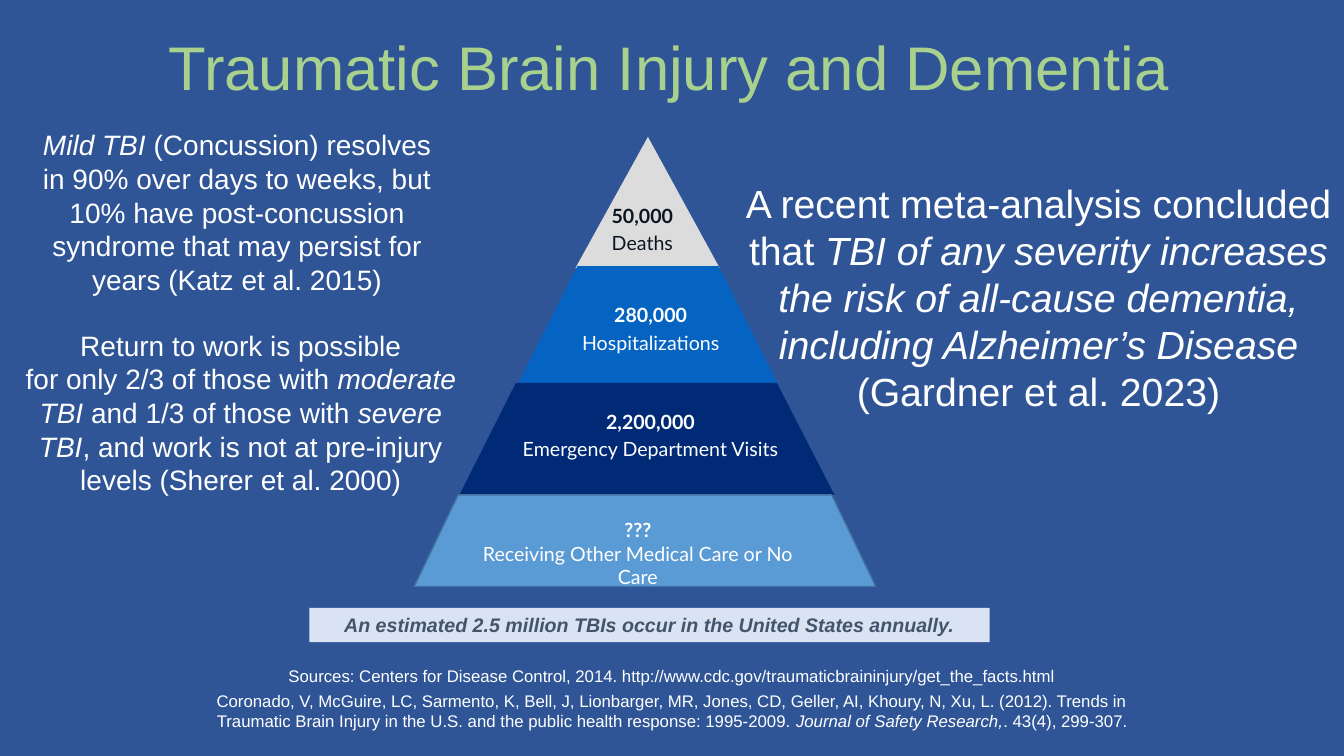
from dataclasses import dataclass

from lxml import etree
from pptx import Presentation
from pptx.dml.color import RGBColor
from pptx.enum.shapes import MSO_SHAPE
from pptx.enum.text import MSO_ANCHOR, PP_ALIGN
from pptx.util import Cm, Pt

CENTER = PP_ALIGN.CENTER
TOP, MIDDLE = MSO_ANCHOR.TOP, MSO_ANCHOR.MIDDLE
RECTANGLE, TRAPEZOID = MSO_SHAPE.RECTANGLE, MSO_SHAPE.TRAPEZOID
TITLE_ONLY = 5


@dataclass(frozen=True)
class Theme:
    """Colours, fonts and type sizes of the slide."""
    background: str = "2F5597"
    title: str = "A9D18E"
    text: str = "FFFFFF"
    dark: str = "0C1621"
    banner: str = "DAE3F3"
    banner_text: str = "44546A"
    deaths: str = "DCDCDC"
    hospital: str = "0563C1"
    emergency: str = "002A76"
    other: str = "5B9BD5"
    other_line: str = "43739E"
    body_font: str = "Arial"
    label_font: str = "Lato"
    title_size: int = 44
    finding_size: int = 28
    body_size: int = 20
    label_size: int = 14
    source_size: int = 12


THEME = Theme()

TIERS = [
    (THEME.deaths, [(5.89, 0), (4.06, 3.31), (7.7, 3.31)],
     (4.57, 1.66, 2.36, 1.32), THEME.dark, "50,000", "Deaths"),
    (THEME.hospital, [(2.56, 6.33), (9.22, 6.33), (7.67, 3.26), (4.11, 3.26)],
     (3.89, 4.17, 4.14, 1.32), THEME.text, "280,000", "Hospitalizations"),
    (THEME.emergency, [(1.14, 9.02), (10.59, 9.02), (9.14, 6.2), (2.56, 6.2)],
     (2.26, 6.86, 7.39, 1.32), THEME.text, "2,200,000", "Emergency Department Visits"),
]
MILD = [[("Mild TBI ", "i"),
         ("(Concussion) resolves in 90% over days to weeks, but 10% have "
          "post-concussion syndrome that may persist for years (Katz et al. 2015)", "")]]
RETURN_TO_WORK = [
    [("Return to work is possible", "")],
    [("for only 2/3 of those with ", ""), ("moderate TBI", "i"),
     (" and 1/3 of those with ", ""), ("severe TBI", "i"),
     (", and work is not at pre-injury levels (Sherer et al. 2000)", "")],
]
FINDING = [
    [("A recent meta-analysis concluded", "")],
    [("that ", ""), ("TBI of any severity increases", "i")],
    [("the risk of all-cause dementia,", "i")],
    [("including Alzheimer’s Disease", "i")],
    [("(Gardner et al. 2023)", "")],
]
SOURCES = [
    [("Sources: Centers for Disease Control, 2014. "
      "http://www.cdc.gov/traumaticbraininjury/get_the_facts.html", "")],
    [("Coronado, V, McGuire, LC, Sarmento, K, Bell, J, Lionbarger, MR, Jones, CD, "
      "Geller, AI, Khoury, N, Xu, L. (2012). Trends in Traumatic Brain Injury in the U.S. "
      "and the public health response: 1995-2009. ", ""),
     ("Journal of Safety Research,", "i"), (". 43(4), 299-307.", "")],
]


def rgb(color):
    """Turn a hex string into a colour."""
    return RGBColor.from_string(color)


def write(tf, paragraphs, size, color=THEME.text, font=THEME.body_font, gap=0):
    """Fill a text frame with centred paragraphs of (text, style) runs."""
    for i, runs in enumerate(paragraphs):
        p = tf.add_paragraph() if i else tf.paragraphs[0]
        p.alignment = CENTER
        p.space_before = Pt(gap if i else 0)
        p.font.name, p.font.size = font, Pt(size)
        p.font.color.rgb = rgb(color)
        for text, style in runs:
            r = p.add_run()
            r.text = text
            if "b" in style:
                r.font.bold = True
            if "i" in style:
                r.font.italic = True


def paint(sp, fill, line=None):
    """Give a shape a flat fill, an optional outline and no shadow."""
    sp.shadow.inherit = False
    sp.fill.solid()
    sp.fill.fore_color.rgb = rgb(fill)
    if line:
        sp.line.color.rgb = rgb(line)
        sp.line.width = Pt(1)
    else:
        sp.line.fill.background()


def add_text(s, box, paragraphs, size, wrap=True, anchor=TOP, inset=True, **style):
    """Place a text box at a box given in centimetres."""
    tf = s.shapes.add_textbox(*map(Cm, box)).text_frame
    tf.word_wrap, tf.vertical_anchor = wrap, anchor
    if not inset:
        tf.margin_left = tf.margin_right = tf.margin_top = tf.margin_bottom = 0
    write(tf, paragraphs, size, **style)


def add_title(s, box, text):
    """Move and format the title placeholder."""
    sp = s.shapes.title
    sp.left, sp.top, sp.width, sp.height = map(Cm, box)
    sp.text_frame.vertical_anchor = MIDDLE
    write(sp.text_frame, [[(text, "")]], THEME.title_size, THEME.title)


def add_pyramid(s, box):
    """Draw the four tiers of the pyramid with their labels."""
    left, top, width, height = box
    for fill, points, *_ in TIERS:
        corners = [(Cm(left + x), Cm(top + y)) for x, y in points]
        builder = s.shapes.build_freeform(*corners[0], scale=1.0)
        builder.add_line_segments(corners[1:], close=True)
        paint(builder.convert_to_shape(), fill)
    for _, _, (x, y, w, h), color, count, name in TIERS:
        add_text(s, (left + x, top + y, w, h), [[(count, "b")], [(name, "")]],
                 THEME.label_size, anchor=MIDDLE, inset=False,
                 color=color, font=THEME.label_font, gap=2.8)
    base_top = 9.02
    base = s.shapes.add_shape(TRAPEZOID, Cm(left), Cm(top + base_top),
                              Cm(width), Cm(height - base_top))
    base.adjustments[0] = 0.48
    paint(base, THEME.other, THEME.other_line)
    add_text(s, (left + 1.24, top + 9.48, 8.79, 1.45),
             [[("???", "b")], [("Receiving Other Medical Care or No Care", "")]],
             THEME.label_size, font=THEME.label_font)


def add_banner(s, box, text):
    """Draw the highlighted statement under the pyramid."""
    sp = s.shapes.add_shape(RECTANGLE, *map(Cm, box))
    paint(sp, THEME.banner)
    sp.text_frame.word_wrap = True
    write(sp.text_frame, [[(text, "bi")]], THEME.label_size, THEME.banner_text)


def main():
    """Build and save the slide."""
    prs = Presentation()
    prs.slide_width, prs.slide_height = Cm(33.87), Cm(19.05)
    s = prs.slides.add_slide(prs.slide_layouts[TITLE_ONLY])
    s.background.fill.solid()
    s.background.fill.fore_color.rgb = rgb(THEME.background)
    add_title(s, (3.35, 0.08, 27.05, 3.18), "Traumatic Brain Injury and Dementia")
    add_text(s, (4.52, 16.64, 24.84, 2.34), SOURCES, THEME.source_size, gap=3.6)
    add_pyramid(s, (10.44, 3.45, 11.63, 11.33))
    add_banner(s, (7.8, 15.32, 17.14, 0.86),
               "An estimated 2.5 million TBIs occur in the United States annually.")
    add_text(s, (0.38, 8.15, 11.38, 5.31), RETURN_TO_WORK, THEME.body_size)
    add_text(s, (0.64, 3.1, 10.67, 4.52), MILD, THEME.body_size)
    add_text(s, (18.31, 4.39, 15.72, 6.25), FINDING, THEME.finding_size, wrap=False)
    prs.save("out.pptx")


if __name__ == "__main__":
    main()
